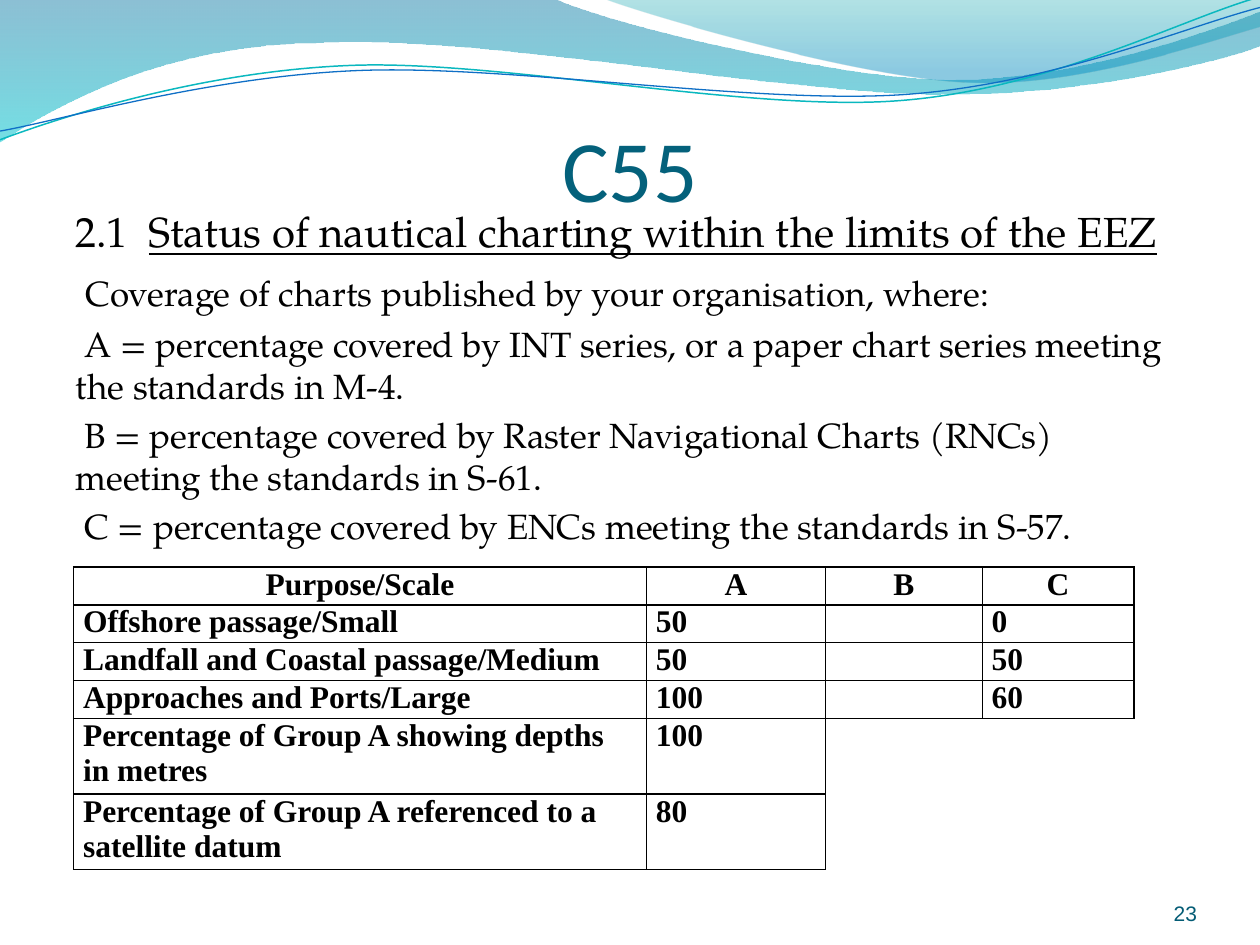
from lxml import etree
from pptx import Presentation
from pptx.dml.color import RGBColor
from pptx.enum.text import MSO_ANCHOR, PP_ALIGN
from pptx.oxml.ns import qn
from pptx.util import Pt

LEFT, CENTER, RIGHT = PP_ALIGN.LEFT, PP_ALIGN.CENTER, PP_ALIGN.RIGHT
TOP, BOTTOM = MSO_ANCHOR.TOP, MSO_ANCHOR.BOTTOM
SERIF, TABLE_FONT = "TeX Gyre Pagella", "Times New Roman"
UNITS_PER_POINT = 100

BANDS = [
    ([(0, -0.7), (316.8, -0.7), (342.7, 12.2, 478.1, 45.4, 545.8, 45.4),
      (614.2, 45.4, 689.8, 18.7, 720, 6.5), (720.7, 25.9),
      (707.8, 31.7, 626.4, 54.7, 537.1, 54), (447.8, 54, 275, 20.2, 185, 24.5),
      (92.9, 25.2, 33.1, 59.8, -0.7, 81.4), (0, -0.7)],
     [(0, "0074A1", 45), (1, "00C6CF", 55)]),
    ([(344.9, -0.7), (366.5, 7.9, 491, 44.6, 553.7, 46.8),
      (616.3, 49.7, 691.9, 23, 720, 15.1), (720, 0), (344.9, -0.7)],
     [(0, "00A1A9", 30), (0.8, "008BBF", 45)]),
]
WAVES = [
    ([(-1.4, 62.9), (33.8, 51.7, 114.1, 29.4, 199.8, 29.9),
      (284.8, 30.3, 425.9, 67.3, 512.5, 64.8), (599.1, 62.4, 676.5, 25.7, 720.2, 15.6)],
     "0AB8BF", 0.85),
    ([(-1.1, 57.9), (32.9, 53.7, 118.3, 32.5, 204.1, 33),
      (290.6, 33.4, 428.9, 63.1, 515.5, 61.4), (601.4, 59.6, 678.4, 30.1, 721.4, 21.3)],
     "0F6FC6", 0.75),
]
WAVE_ROTATION = 357.3
BODY = [
    (0, [("2.1  ", 24, False),
         ("Status of nautical charting within the limits of the EEZ", 24, True)]),
    (4.8, [(" ", 24, False),
           ("Coverage of charts published by your organisation, where:", 20, False)]),
    (4.4, [(" A = percentage covered by INT series, or a paper chart series "
            "meeting the standards in M-4.", 20, False)]),
    (4, [(" B = percentage covered by Raster Navigational Charts (RNCs) "
          "meeting the standards in S-61.", 20, False)]),
    (4, [(" C = percentage covered by ENCs meeting the standards in S-57.", 20, False)]),
]
ROWS = [
    ["Purpose/Scale", "A", "B", "C"],
    ["Offshore passage/Small", "50", "", "0"],
    ["Landfall and Coastal passage/Medium", "50", "", "50"],
    ["Approaches and Ports/Large", "100", "", "60"],
    ["Percentage of Group A showing depths in metres", "100"],
    ["Percentage of Group A referenced to a satellite datum", "80"],
]
COL_WIDTHS = [327.4, 102.3, 89.6, 86.6]
ROW_HEIGHTS = [21.6] * 4 + [43.2] * 2
EDGES = {"a:lnL": (0, -1), "a:lnR": (0, 1), "a:lnT": (-1, 0), "a:lnB": (1, 0)}


def rgb(color):
    return RGBColor.from_string(color)


def add_free(s, path, close):
    points = [(seg[i] * UNITS_PER_POINT, seg[i + 1] * UNITS_PER_POINT)
              for seg in path for i in range(0, len(seg), 2)]
    builder = s.shapes.build_freeform(*points[0], scale=Pt(1) / UNITS_PER_POINT)
    builder.add_line_segments(points[1:], close=close)
    sp = builder.convert_to_shape()
    sp.shadow.inherit = False
    lines = iter(list(sp._element.iter(qn("a:lnTo"))))
    for seg in path[1:]:
        curve = next(lines)
        if len(seg) == 6:
            curve.tag = qn("a:cubicBezTo")
            for line in (next(lines), next(lines)):
                curve.append(line[0])
                line.getparent().remove(line)
    return sp


def add_band(s, path, stops):
    sp = add_free(s, path, True)
    sp.line.fill.background()
    sp.fill.gradient()
    sp.fill.gradient_angle = 270
    for stop, gs, (pos, color, alpha) in zip(
            sp.fill.gradient_stops, sp._element.iter(qn("a:gs")), stops):
        stop.position = pos
        stop.color.rgb = rgb(color)
        etree.SubElement(gs[0], qn("a:alpha"), val=str(alpha * 1000))


def add_wave(s, path, color, width):
    sp = add_free(s, path, False)
    sp.rotation = WAVE_ROTATION
    sp.fill.background()
    sp.line.color.rgb = rgb(color)
    sp.line.width = Pt(width)


def add_run(p, text, size=18, font=SERIF, color="000000", bold=False, underline=False):
    r = p.add_run()
    r.text = text
    r.font.size, r.font.name = Pt(size), font
    r.font.bold, r.font.underline = bold, underline
    r.font.color.rgb = rgb(color)


def add_box(s, left, top, width, height, margins, anchor=TOP, align=LEFT):
    tf = s.shapes.add_textbox(Pt(left), Pt(top), Pt(width), Pt(height)).text_frame
    tf.word_wrap = True
    tf.vertical_anchor = anchor
    tf.margin_left, tf.margin_top, tf.margin_right, tf.margin_bottom = map(Pt, margins)
    tf.paragraphs[0].alignment = align
    return tf


def in_grid(row, col):
    return 0 <= row < len(ROWS) and 0 <= col < len(ROWS[row])


def add_borders(cell, row, col):
    tc_pr = cell._tc.get_or_add_tcPr()
    for i, (tag, (dr, dc)) in enumerate(EDGES.items()):
        ln = etree.Element(qn(tag), w=str(Pt(1)))
        if in_grid(row, col) or in_grid(row + dr, col + dc):
            fill = etree.SubElement(ln, qn("a:solidFill"))
            etree.SubElement(fill, qn("a:srgbClr"), val="000000")
        else:
            etree.SubElement(ln, qn("a:noFill"))
        tc_pr.insert(i, ln)


def add_coverage_table(s):
    table = s.shapes.add_table(len(ROWS), len(COL_WIDTHS), Pt(42.1), Pt(324),
                               Pt(sum(COL_WIDTHS)), Pt(sum(ROW_HEIGHTS))).table
    table.first_row = table.horz_banding = False
    for column, width in zip(table.columns, COL_WIDTHS):
        column.width = Pt(width)
    for i, height in enumerate(ROW_HEIGHTS):
        table.rows[i].height = Pt(height)
        for j in range(len(COL_WIDTHS)):
            cell = table.cell(i, j)
            cell.margin_left = cell.margin_right = Pt(5.4)
            cell.margin_top = cell.margin_bottom = 0
            cell.fill.background()
            add_borders(cell, i, j)
            p = cell.text_frame.paragraphs[0]
            p.alignment = CENTER if i == 0 else LEFT
            if in_grid(i, j) and ROWS[i][j]:
                add_run(p, ROWS[i][j], font=TABLE_FONT, bold=True)


def main():
    prs = Presentation()
    prs.slide_width, prs.slide_height = Pt(720), Pt(540)
    s = prs.slides.add_slide(prs.slide_layouts[6])
    for band in BANDS:
        add_band(s, *band)
    for wave in WAVES:
        add_wave(s, *wave)

    title = add_box(s, 36, 36, 648, 90, (0, 3.6, 0, 0), BOTTOM, CENTER)
    add_run(title.paragraphs[0], "C55", size=50, font="Calibri", color="04617B")

    body = add_box(s, 36, 114, 648, 345.6, (7.2, 3.6, 7.2, 3.6))
    for i, (space, runs) in enumerate(BODY):
        p = body.add_paragraph() if i else body.paragraphs[0]
        if space:
            p.space_before = Pt(space)
        for text, size, underline in runs:
            add_run(p, text, size=size, underline=underline)

    number = add_box(s, 624.2, 500.4, 59.8, 28.8, (0, 0, 0, 0), BOTTOM, RIGHT)
    add_run(number.paragraphs[0], "23", size=12, font="Arial", color="045C75")

    add_coverage_table(s)
    prs.save("out.pptx")


if __name__ == "__main__":
    main()
